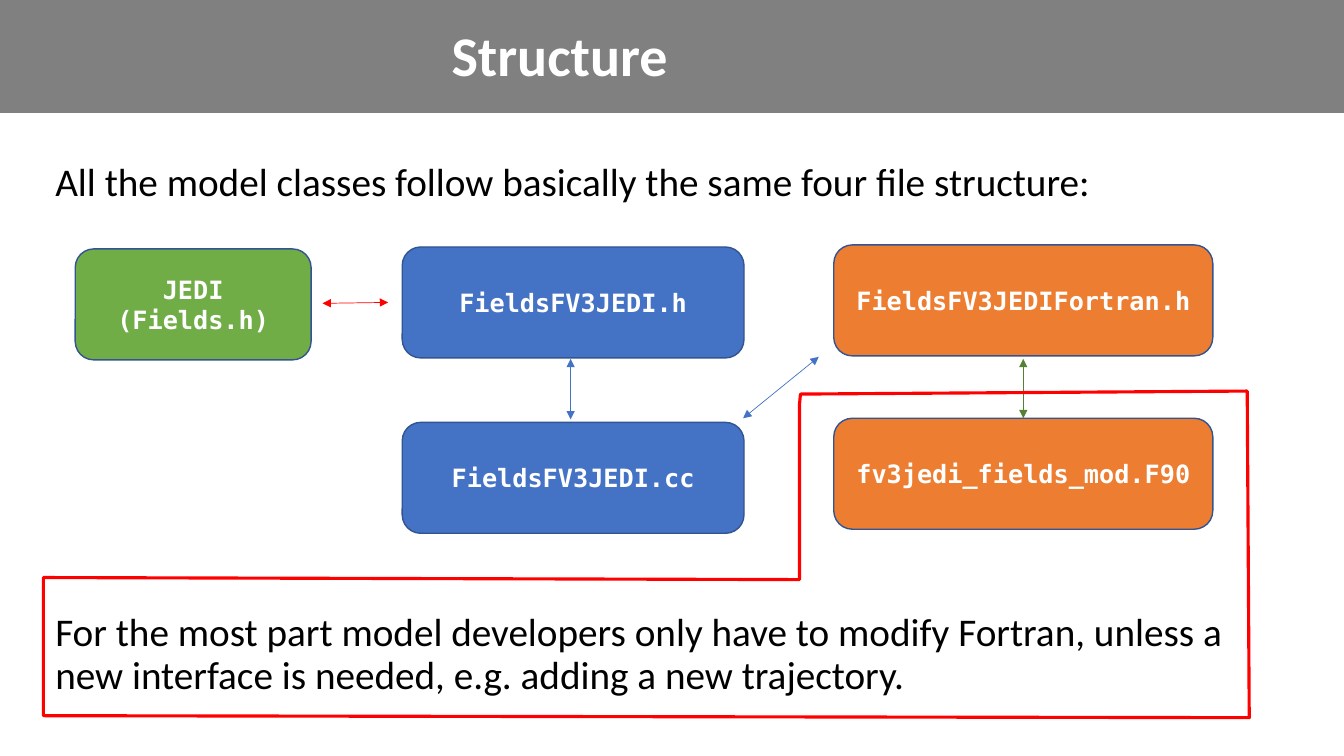
from lxml import etree
from pptx import Presentation, util as u
from pptx.dml.color import RGBColor
from pptx.enum import shapes, text
from pptx.oxml import ns


def tint(code):
    return RGBColor.from_string(code)


class Deck:
    sans = "Calibri"
    mono = "DejaVu Sans Mono"
    white, black, gray = "FFFFFF", "000000", "808080"
    blue, green, orange, red = "4472C4", "70AD47", "ED7D31", "FF0000"
    edge, moss = "325491", "548235"

    def __init__(self):
        self.show = Presentation()
        self.show.slide_width = u.Inches(13.33)
        self.show.slide_height = u.Inches(7.5)
        self.slide = self.show.slides.add_slide(self.show.slide_layouts[6])
        self.items = self.slide.shapes

    def col(self, n):
        return round(self.show.slide_width * n / 100)

    def row(self, n):
        return round(self.show.slide_height * n / 100)

    def area(self, x, y, w, h):
        return self.col(x), self.row(y), self.col(w), self.row(h)

    def label(self, shape, words, size, face, color, bold, align, anchor, lead=1.0):
        frame = shape.text_frame
        frame.word_wrap = True
        frame.vertical_anchor = anchor
        frame.text = words
        for par in frame.paragraphs:
            par.alignment = align
            par.line_spacing = lead
            for run in par.runs:
                run.font.size = u.Pt(size)
                run.font.name = face
                run.font.bold = bold
                run.font.color.rgb = tint(color)

    def band(self, *area):
        shape = self.items.add_shape(shapes.MSO_SHAPE.RECTANGLE, *self.area(*area))
        shape.shadow.inherit = False
        shape.fill.solid()
        shape.fill.fore_color.rgb = tint(self.gray)
        shape.line.fill.background()

    def title(self, words, *area):
        self.label(self.items.add_textbox(*self.area(*area)), words, 40, self.sans, self.white,
                   True, text.PP_ALIGN.CENTER, text.MSO_ANCHOR.MIDDLE, 0.9)

    def body(self, words, *area):
        self.label(self.items.add_textbox(*self.area(*area)), words, 28, self.sans, self.black,
                   False, text.PP_ALIGN.LEFT, text.MSO_ANCHOR.TOP, 0.9)

    def card(self, words, color, *area):
        shape = self.items.add_shape(shapes.MSO_SHAPE.ROUNDED_RECTANGLE, *self.area(*area))
        shape.shadow.inherit = False
        shape.fill.solid()
        shape.fill.fore_color.rgb = tint(color)
        shape.line.color.rgb = tint(self.edge)
        shape.line.width = u.Pt(1)
        self.label(shape, words, 18, self.mono, self.white,
                   True, text.PP_ALIGN.CENTER, text.MSO_ANCHOR.MIDDLE)

    def arrow(self, color, x1, y1, x2, y2):
        link = self.items.add_connector(shapes.MSO_CONNECTOR.STRAIGHT, self.col(x1),
                                        self.row(y1), self.col(x2), self.row(y2))
        link.line.color.rgb = tint(color)
        link.line.width = u.Pt(0.5)
        stroke = link.get_or_add_ln()
        for tag in ("a:headEnd", "a:tailEnd"):
            etree.SubElement(stroke, ns.qn(tag), type="triangle")
        etree.SubElement(link.element.spPr, ns.qn("a:effectLst"))

    def frame(self, color, points):
        start, *rest = [(self.col(x), self.row(y)) for x, y in points]
        pen = self.items.build_freeform(*start)
        pen.add_line_segments(rest, close=True)
        shape = pen.convert_to_shape()
        shape.shadow.inherit = False
        shape.fill.background()
        shape.line.color.rgb = tint(color)
        shape.line.width = u.Pt(2.25)


def main():
    deck = Deck()
    deck.band(-0.2, -0.25, 100.3, 15.2)
    deck.title("Structure", 1.65, 1.6, 79.97, 12.13)
    deck.body("All the model classes follow basically the same four file structure:",
              3.38, 20.8, 93.6, 8)
    deck.body("For the most part model developers only have to modify Fortran, "
              "unless a new interface is needed, e.g. adding a new trajectory.",
              3.38, 80.4, 93.6, 14)

    high = 14.67
    for words, color, x, y, wide in (
        ("FieldsFV3JEDI.h", deck.blue, 29.93, 32.67, 25.43),
        ("FieldsFV3JEDI.cc", deck.blue, 29.93, 55.87, 25.43),
        ("FieldsFV3JEDIFortran.h", deck.orange, 62.04, 32.4, 28.2),
        ("fv3jedi_fields_mod.F90", deck.orange, 62.04, 55.33, 28.2),
        ("JEDI\n(Fields.h)", deck.green, 5.6, 32.93, 17.55),
    ):
        deck.card(words, color, x, y, wide, high)

    deck.arrow(deck.moss, 76.14, 47.47, 76.14, 55.33)
    deck.arrow(deck.blue, 60.92, 47.2, 55.29, 55.33)
    deck.arrow(deck.red, 28.88, 40, 24, 40.13)
    deck.arrow(deck.blue, 42.46, 47.47, 42.46, 55.47)
    deck.frame(deck.red, [(59.49, 53.47), (59.49, 76.67), (3.23, 76.4), (3.23, 94.67),
                          (92.95, 94.93), (92.8, 51.73), (59.56, 52.13)])
    deck.show.save("out.pptx")


if __name__ == "__main__":
    main()
